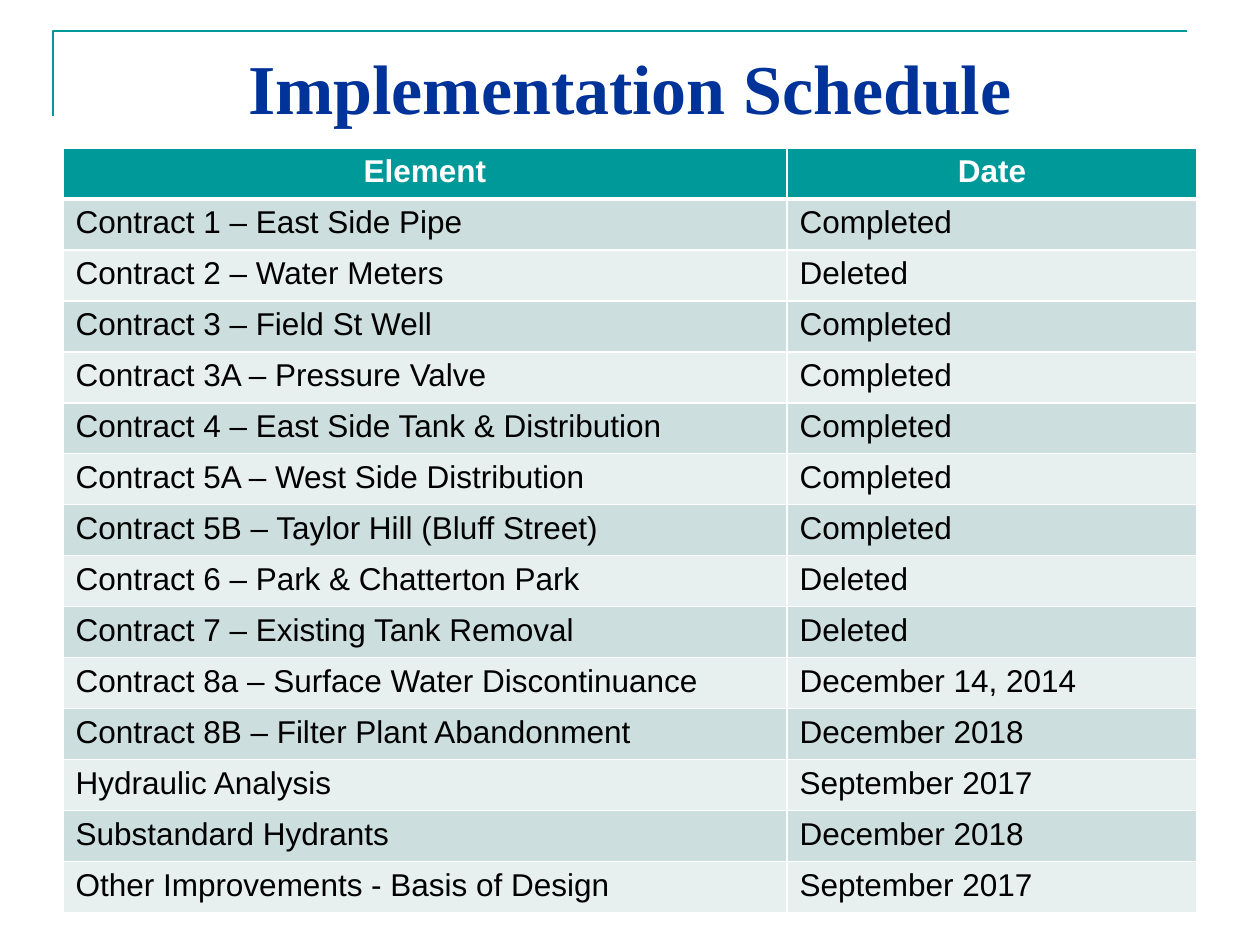
from lxml.etree import SubElement
from pptx import Presentation
from pptx.dml.color import RGBColor
from pptx.enum.text import MSO_ANCHOR, PP_ALIGN
from pptx.oxml.ns import qn
from pptx.util import Emu, Pt

SCALE = 914400 / 126
THEME = {
    "teal": "009999", "navy": "003399", "white": "FFFFFF", "black": "000000",
    "bands": ("CCDEDE", "E7EFEF"),
    "title_font": "Times New Roman", "body_font": "Arial",
    "title_size": 40, "body_size": 18, "rule": 1.5, "border": 1, "header_border": 3,
}


def px(n):
    return Emu(round(n * SCALE))


def add_run(p, text, font, size, color, bold):
    r = p.add_run()
    r.text = text
    r.font.name = font
    r.font.size = Pt(size)
    r.font.bold = bold
    r.font.color.rgb = RGBColor.from_string(color)


prs = Presentation()
prs.slide_width, prs.slide_height = px(1260), px(945)
s = prs.slides.add_slide(prs.slide_layouts[6])

fb = s.shapes.build_freeform(53, 116, scale=SCALE)
fb.add_line_segments([(53, 31), (1187, 31)], close=False)
sp = fb.convert_to_shape()
sp.shadow.inherit = False
sp.fill.background()
sp.line.color.rgb = RGBColor.from_string(THEME["teal"])
sp.line.width = Pt(THEME["rule"])

sp = s.shapes.add_textbox(px(63), px(38), px(1134), px(157))
tf = sp.text_frame
tf.word_wrap = True
tf.vertical_anchor = MSO_ANCHOR.TOP
p = tf.paragraphs[0]
p.alignment = PP_ALIGN.CENTER
add_run(p, "Implementation Schedule", THEME["title_font"], THEME["title_size"], THEME["navy"], True)

schedule = [
    ("Element", "Date"),
    ("Contract 1 – East Side Pipe", "Completed"),
    ("Contract 2 – Water Meters", "Deleted"),
    ("Contract 3 – Field St Well", "Completed"),
    ("Contract 3A – Pressure Valve", "Completed"),
    ("Contract 4 – East Side Tank & Distribution", "Completed"),
    ("Contract 5A – West Side Distribution", "Completed"),
    ("Contract 5B – Taylor Hill (Bluff Street)", "Completed"),
    ("Contract 6 – Park & Chatterton Park", "Deleted"),
    ("Contract 7 – Existing Tank Removal", "Deleted"),
    ("Contract 8a – Surface Water Discontinuance", "December 14, 2014"),
    ("Contract 8B – Filter Plant Abandonment", "December 2018"),
    ("Hydraulic Analysis", "September 2017"),
    ("Substandard Hydrants", "December 2018"),
    ("Other Improvements - Basis of Design", "September 2017"),
]
row_heights = [49 if i == 5 else 51 for i in range(len(schedule))]
table = s.shapes.add_table(
    len(schedule), 2, px(63), px(148), px(1134), px(sum(row_heights))
).table
table.columns[0].width, table.columns[1].width = px(724), px(410)

for i, (values, height) in enumerate(zip(schedule, row_heights)):
    header = i == 0
    table.rows[i].height = px(height)
    fill = THEME["teal"] if header else THEME["bands"][(i - 1) % 2]
    for j, text in enumerate(values):
        cell = table.cell(i, j)
        p = cell.text_frame.paragraphs[0]
        p.alignment = PP_ALIGN.CENTER if header else PP_ALIGN.LEFT
        add_run(p, text, THEME["body_font"], THEME["body_size"],
                THEME["white"] if header else THEME["black"], header)
        tcPr = cell._tc.get_or_add_tcPr()
        for side in ("L", "R", "T", "B"):
            thick = (header and side == "B") or (i == 1 and side == "T")
            width = THEME["header_border"] if thick else THEME["border"]
            ln = SubElement(tcPr, qn(f"a:ln{side}"), w=str(Pt(width)))
            line_fill = SubElement(ln, qn("a:solidFill"))
            SubElement(line_fill, qn("a:srgbClr"), val=THEME["white"])
        cell.fill.solid()
        cell.fill.fore_color.rgb = RGBColor.from_string(fill)

prs.save("out.pptx")
